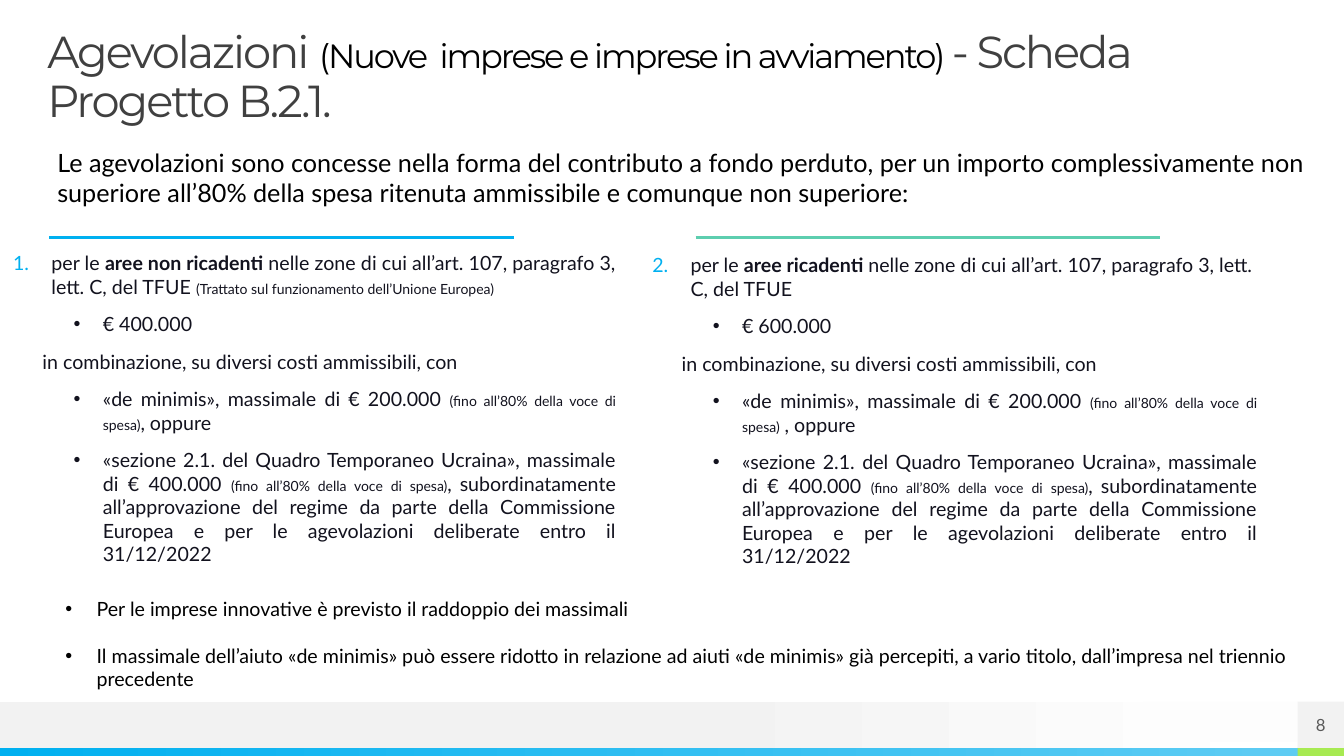
from lxml import etree
from pptx import Presentation
from pptx import util as u
from pptx.dml import color as dml
from pptx.enum import shapes, text
from pptx.oxml import ns

BLUE, INK, BLACK = "00B0F0", "12121E", "000000"
ALIGN = text.PP_ALIGN


def rgb(value):
    return dml.RGBColor.from_string(value)


def write(frame, spans, color, align=ALIGN.JUSTIFY, margin=0, indent=0,
          before=0, after=0, number=None, bullet=False, face="Lato"):
    para = frame.paragraphs[0]
    if para.runs:
        para = frame.add_paragraph()
    para.alignment = align
    para.space_before, para.space_after = u.Pt(before), u.Pt(after)
    props = para._p.get_or_add_pPr()
    props.set("marL", str(u.Inches(margin)))
    props.set("indent", str(u.Inches(indent)))
    if number:
        tint = etree.SubElement(props, ns.qn("a:buClr"))
        etree.SubElement(tint, ns.qn("a:srgbClr"), val=BLUE)
        etree.SubElement(props, ns.qn("a:buAutoNum"), type="arabicPeriod", startAt=str(number))
    elif bullet:
        etree.SubElement(props, ns.qn("a:buFont"), typeface="Arial")
        etree.SubElement(props, ns.qn("a:buChar"), char="•")
    para.font.name = face
    para.font.color.rgb = rgb(color)
    for words, size, *bold in spans:
        span = para.add_run()
        span.text = words
        span.font.size = u.Pt(size)
        if bold:
            span.font.bold = True
    return para


deck = Presentation()
deck.slide_width, deck.slide_height = u.Inches(13.33), u.Inches(7.5)
page = deck.slides.add_slide(deck.slide_layouts[6])

bands = [
    (0, 6.96, 12.87, 0.46, [(0.53, "F2F2F2"), (1, "FFFFFF")]),
    (0, 7.42, 12.87, 0.08, [(0, BLUE), (1, "5ECCF3")]),
    (12.87, 7.42, 0.46, 0.08, "A7EA52"),
    (11.34, 6.96, 1.53, 0.4, "FDFDFD"),
    (12.87, 6.96, 0.46, 0.46, "F2F2F2"),
]
for left, top, width, height, paint in bands:
    band = page.shapes.add_shape(shapes.MSO_SHAPE.RECTANGLE, u.Inches(left), u.Inches(top),
                                 u.Inches(width), u.Inches(height))
    band.shadow.inherit = False
    band.line.fill.background()
    if isinstance(paint, str):
        band.fill.solid()
        band.fill.fore_color.rgb = rgb(paint)
    else:
        band.fill.gradient()
        band.fill.gradient_angle = 0
        for stop, (position, tone) in zip(band.fill.gradient_stops, paint):
            stop.position = position
            stop.color.rgb = rgb(tone)

number_frame = band.text_frame
number_frame.margin_left = number_frame.margin_right = 0
number_frame.margin_top = number_frame.margin_bottom = 0
number_frame.vertical_anchor = text.MSO_ANCHOR.MIDDLE
write(number_frame, [("8", 12)], "595959", ALIGN.CENTER)

for left, tone in [(0.49, BLUE), (6.9, "5DCEAF")]:
    rule = page.shapes.add_connector(shapes.MSO_CONNECTOR.STRAIGHT, u.Inches(left), u.Inches(2.36),
                                     u.Inches(left + 4.61), u.Inches(2.36))
    rule.line.color.rgb = rgb(tone)
    rule.line.width = u.Pt(2.25)
    etree.SubElement(rule._element.spPr, ns.qn("a:effectLst"))

frames = {}
for name, left, top, width, height, inset in [
    ("title", 0.47, 0.3, 12.4, 0.97, False),
    ("intro", 0.47, 1.41, 12.66, 0.71, True),
    ("outside", 0.13, 2.49, 5.98, 3.36, False),
    ("inside", 6.47, 2.51, 6, 3.34, False),
    ("notes", 0.55, 5.87, 12.32, 1.09, True),
]:
    box = page.shapes.add_textbox(u.Inches(left), u.Inches(top), u.Inches(width), u.Inches(height))
    frame = frames[name] = box.text_frame
    frame.word_wrap = True
    if not inset:
        frame.margin_left = frame.margin_right = frame.margin_top = frame.margin_bottom = 0

title = write(frames["title"], [("Agevolazioni ", 32),
                                ("(Nuove  imprese e imprese in avviamento) ", 24),
                                ("- Scheda Progetto B.2.1.", 32)],
              "404040", ALIGN.LEFT, face="Montserrat")
title.line_spacing = 0.9
for span, tone in zip(title.runs, ("404040", BLACK, "404040")):
    span.font.name = "Montserrat"
    span.font.color.rgb = rgb(tone)
    span._r.get_or_add_rPr().set("spc", "-150")

write(frames["intro"], [("Le agevolazioni sono concesse nella forma del contributo a fondo perduto, "
                         "per un importo complessivamente non superiore all’80% della spesa ritenuta "
                         "ammissibile e comunque non superiore:", 18)], BLACK, ALIGN.LEFT)

zone = "nelle zone di cui all’art. 107, paragrafo 3, lett. C, del TFUE"
share = ("(fino all’80% della voce di spesa)", 10)
columns = [
    ("outside", 1, ALIGN.JUSTIFY, "aree non ricadenti ",
     [(zone + " ", 14), ("(Trattato sul funzionamento dell’Unione Europea)", 10)],
     "€ 400.000", ", oppure"),
    ("inside", 2, ALIGN.LEFT, "aree ricadenti ", [(zone, 14)], "€ 600.000", " , oppure"),
]
for name, number, align, area, place, limit, either in columns:
    frame = frames[name]
    write(frame, [("per le ", 14), (area, 14, True)] + place, INK, align,
          0.38, -0.38, 10, 5, number)
    items = [
        (True, [(limit, 14)]),
        (False, [("in combinazione, su diversi costi ammissibili, con", 14)]),
        (True, [("«de minimis», massimale di € 200.000 ", 14), share, (either, 14)]),
        (True, [("«sezione 2.1. del Quadro Temporaneo Ucraina», massimale di € 400.000 ", 14),
                share, (",", 14), (" ", 10),
                ("subordinatamente all’approvazione del regime da parte della Commissione "
                 "Europea e per le agevolazioni deliberate entro il 31/12/2022", 14)]),
    ]
    for bullet, spans in items:
        margin, indent = (0.89, -0.29) if bullet else (0.29, 0)
        write(frame, spans, INK, ALIGN.JUSTIFY, margin, indent, 5, 5, bullet=bullet)

for words, after in [
    ("Per le imprese innovative è previsto il raddoppio dei massimali", 16.8),
    ("Il massimale dell’aiuto «de minimis» può essere ridotto in relazione ad aiuti «de minimis» "
     "già percepiti, a vario titolo, dall’impresa nel triennio precedente", 0),
]:
    write(frames["notes"], [(words, 14)], BLACK, margin=0.31, indent=-0.31, after=after, bullet=True)

deck.save("out.pptx")
